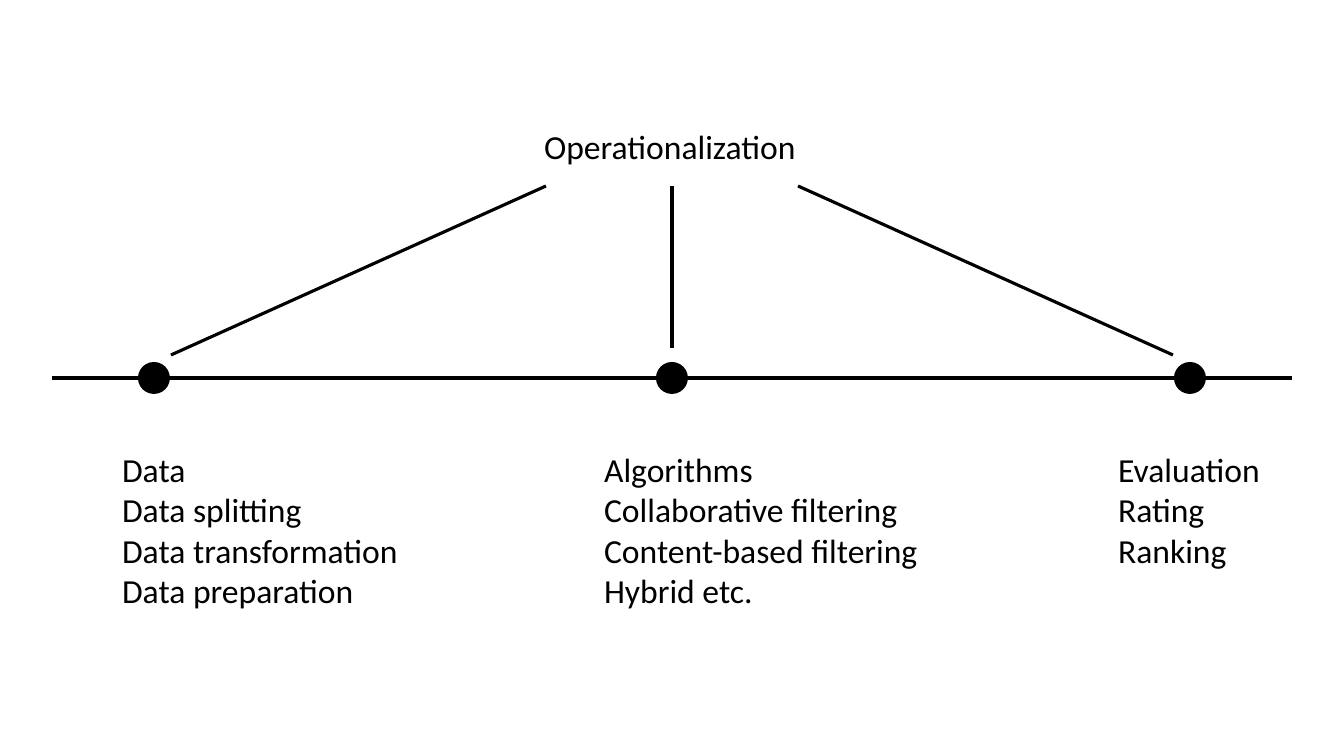
from lxml.etree import SubElement
from pptx import Presentation
from pptx.dml.color import RGBColor
from pptx.enum.shapes import MSO_CONNECTOR as Connector, MSO_SHAPE as Preset
from pptx.enum.text import MSO_ANCHOR as Anchor, MSO_AUTO_SIZE as AutoSize, PP_ALIGN as Align
from pptx.oxml.ns import qn
from pptx.util import Emu, Pt

THEME = {
    "ink": RGBColor(0, 0, 0),
    "font": "Calibri",
    "text_size": Pt(24),
    "line_width": Pt(2.25),
}


def px(length):
    return Emu(round(length * 914400 / 100.8))


def write_text(shape, lines, left, top, width, height, wrap=False):
    shape.left, shape.top = px(left), px(top)
    shape.width, shape.height = px(width), px(height)
    frame = shape.text_frame
    frame.text = "\n".join(lines)
    frame.word_wrap = wrap
    frame.auto_size = AutoSize.NONE
    frame.vertical_anchor = Anchor.TOP
    for paragraph in frame.paragraphs:
        properties = paragraph._p.get_or_add_pPr()
        properties.set("marL", "0")
        properties.set("indent", "0")
        SubElement(properties, qn("a:buNone"))
        paragraph.alignment = Align.LEFT
        paragraph.space_before = Pt(0)
        font = paragraph.runs[0].font
        font.name = THEME["font"]
        font.size = THEME["text_size"]
        font.bold = False
        font.color.rgb = THEME["ink"]


presentation = Presentation()
presentation.slide_width, presentation.slide_height = px(1344), px(756)
slide = presentation.slides.add_slide(presentation.slide_layouts.get_by_name("Comparison"))
title, *bodies = slide.placeholders

write_text(title, ["Operationalization"], 534, 121, 275, 50, wrap=True)

stages = [
    (112, 298, ["Data", "Data splitting", "Data transformation", "Data preparation"]),
    (594, 338, ["Algorithms", "Collaborative filtering", "Content-based filtering", "Hybrid etc."]),
    (1108, 163, ["Evaluation", "Rating", "Ranking"]),
]
for body, (left, width, lines) in zip(bodies, stages):
    write_text(body, lines, left, 444, width, 10 + 40 * len(lines))
for unused in bodies[len(stages):]:
    unused.element.getparent().remove(unused.element)

AXIS_Y, CENTER_X, STAGE_GAP, DOT_SIZE = 378, 672, 518, 32
line_ends = [
    (52, AXIS_Y, 1292, AXIS_Y),
    (171, 355, 546, 186),
    (798, 186, 1173, 355),
    (CENTER_X, 348, CENTER_X, 186),
]
for ends in line_ends:
    line = slide.shapes.add_connector(Connector.STRAIGHT, *map(px, ends))
    line.line.color.rgb = THEME["ink"]
    line.line.width = THEME["line_width"]
    SubElement(line._element.spPr, qn("a:effectLst"))

for step in (-1, 0, 1):
    dot_left = CENTER_X + step * STAGE_GAP - DOT_SIZE // 2
    dot = slide.shapes.add_shape(
        Preset.OVAL, px(dot_left), px(AXIS_Y - DOT_SIZE // 2), px(DOT_SIZE), px(DOT_SIZE)
    )
    dot.shadow.inherit = False
    dot.fill.solid()
    dot.fill.fore_color.rgb = THEME["ink"]
    dot.line.fill.background()

presentation.save("out.pptx")
